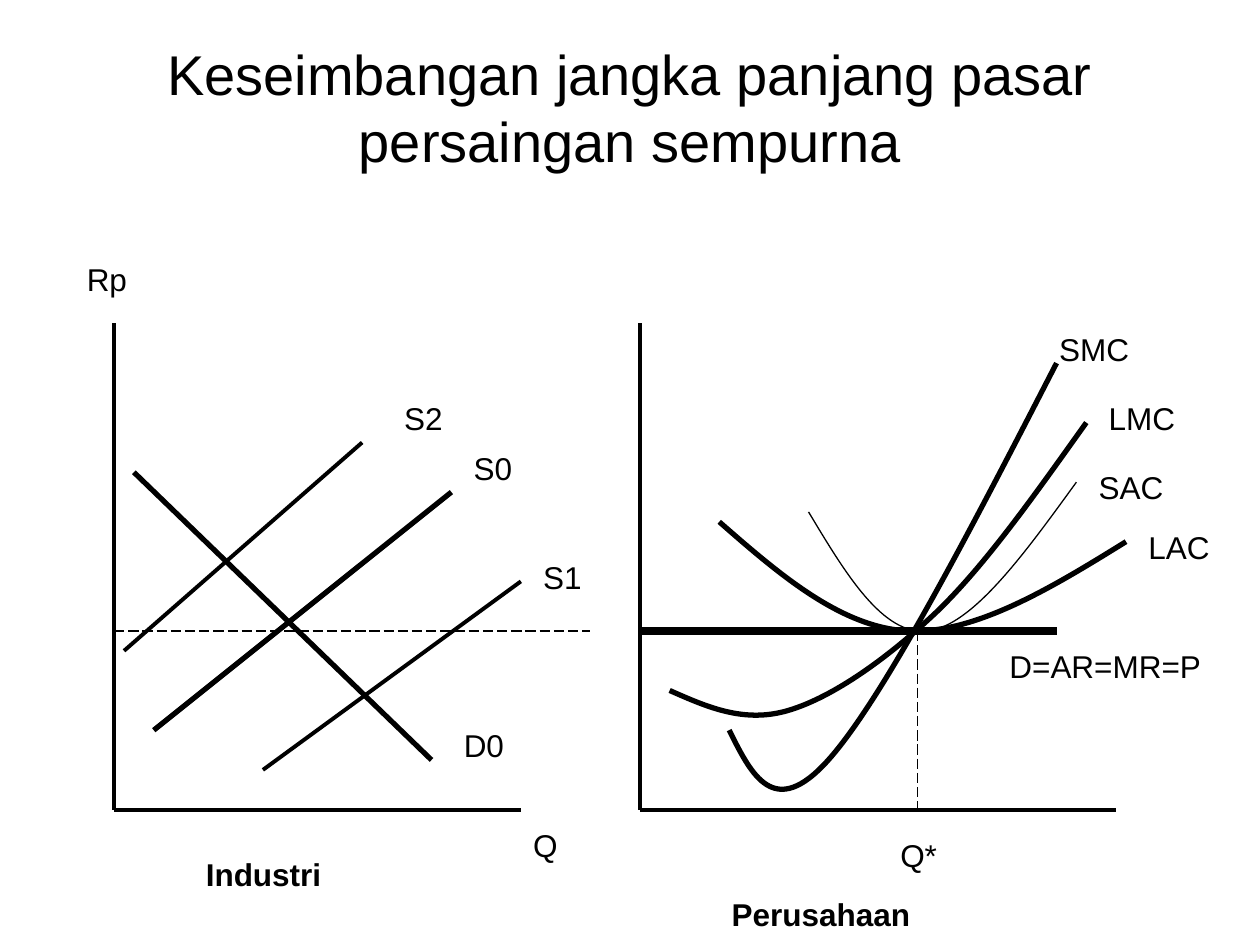
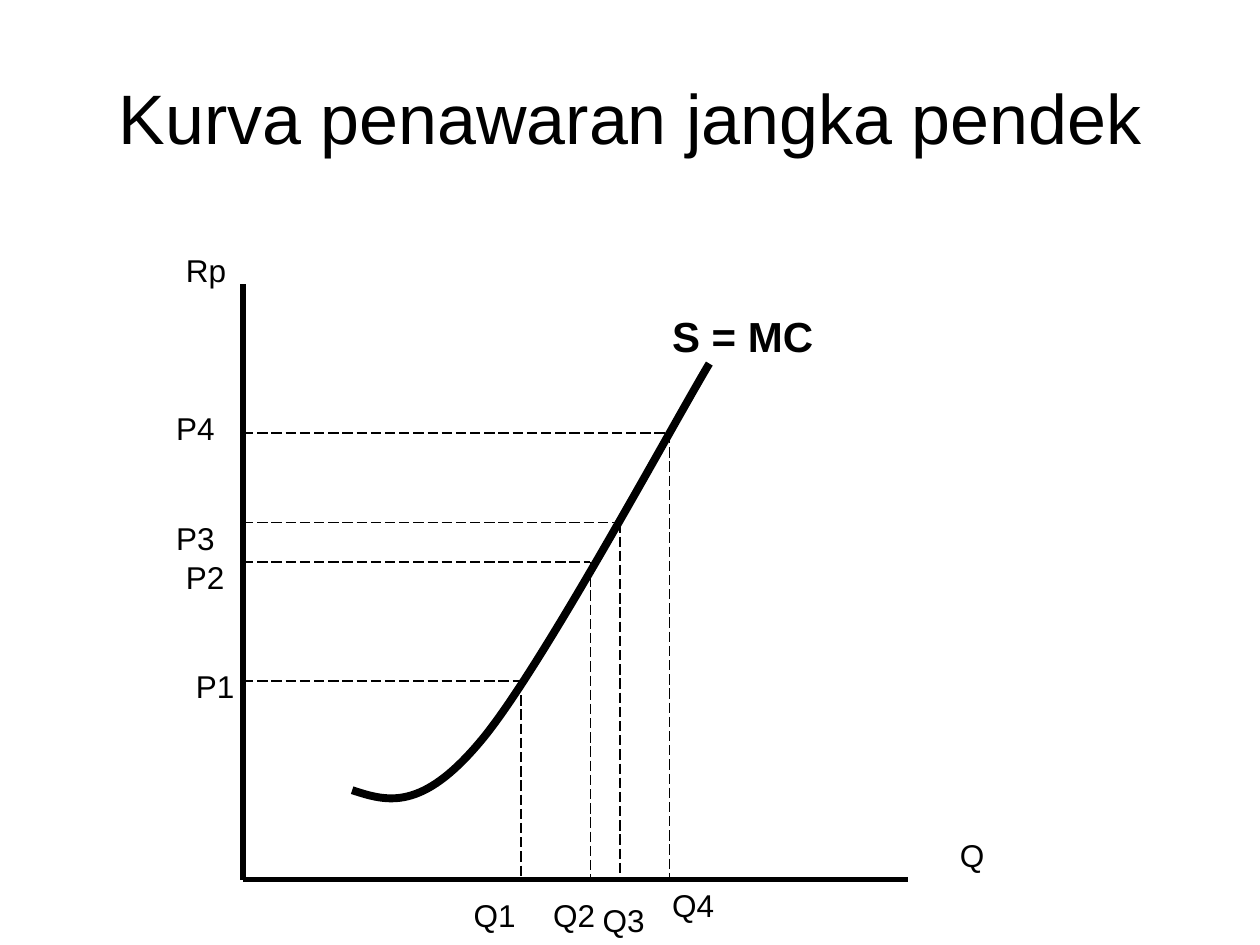
from dataclasses import dataclass
from functools import partial

from lxml.etree import SubElement
from pptx import Presentation
from pptx.dml.color import RGBColor
from pptx.enum.dml import MSO_LINE_DASH_STYLE as Dash
from pptx.enum.shapes import MSO_CONNECTOR as Connector
from pptx.enum.text import MSO_ANCHOR as Anchor, MSO_AUTO_SIZE as AutoSize, PP_ALIGN as Align
from pptx.oxml.ns import qn
from pptx.util import Cm, Pt

INK = "000000"
PAPER = "FFFFFF"
FONT = "Arial"
LABEL_HEIGHT = 1.02
GUIDE = {"weight": 0.75, "dash": Dash.LONG_DASH}
LABEL_FRAME = {"word_wrap": True, "auto_size": AutoSize.SHAPE_TO_FIT_TEXT}
TITLE_FRAME = {"word_wrap": True, "vertical_anchor": Anchor.MIDDLE}


@dataclass
class Box:
    """Area in centimetres that holds one diagram or title."""
    left: float
    top: float
    width: float
    height: float

    def at(self, x, y):
        """Turn a point inside the box into slide lengths."""
        return Cm(self.left + x), Cm(self.top + y)


def color(code):
    """Turn a hex string into a colour."""
    return RGBColor.from_string(code)


def apply(target, formats):
    """Set each format value on the target."""
    for key, value in formats.items():
        setattr(target, key, value)


def write(slide, corner, size, words, frame_format, points, bold=False, align=Align.LEFT):
    """Place one paragraph of text."""
    frame = slide.shapes.add_textbox(*corner, *map(Cm, size)).text_frame
    apply(frame, frame_format)
    paragraph = frame.paragraphs[0]
    paragraph.alignment = align
    run = paragraph.add_run()
    run.text = words
    apply(run.font, {"name": FONT, "size": Pt(points), "bold": bold})
    run.font.color.rgb = color(INK)


def add_title(slide, box, words, points):
    """Centre the slide title in its box."""
    write(slide, box.at(0, 0), (box.width, box.height), words, TITLE_FRAME, points,
          align=Align.CENTER)


def add_label(slide, box, words, x, y, width, points=18, bold=False):
    """Place a label relative to the diagram box."""
    height = LABEL_HEIGHT * points / 18
    write(slide, box.at(x, y), (width, height), words, LABEL_FRAME, points, bold)


def style_line(line, weight, dash=None):
    """Give a line its colour, weight and dash."""
    line.color.rgb = color(INK)
    apply(line, {"width": Pt(weight), "dash_style": dash})


def add_line(slide, box, start, end, weight, dash=None):
    """Draw a straight line between two points of the box."""
    line = slide.shapes.add_connector(Connector.STRAIGHT, *box.at(*start), *box.at(*end))
    style_line(line.line, weight, dash)
    SubElement(line._element.spPr, qn("a:effectLst"))


def add_curve(slide, box, controls, weight):
    """Draw a smooth open curve through joined cubic segments."""
    builder = slide.shapes.build_freeform(*box.at(*controls[0]))
    builder.add_line_segments([box.at(*point) for point in controls[1:]], close=False)
    curve = builder.convert_to_shape()
    straights = list(curve._element.iter(qn("a:lnTo")))
    for first in range(0, len(straights), 3):
        outline = straights[first].getparent()
        cubic = SubElement(outline, qn("a:cubicBezTo"))
        for straight in straights[first:first + 3]:
            cubic.append(straight[0])
            outline.remove(straight)
    curve.shadow.inherit = False
    curve.fill.background()
    style_line(curve.line, weight)


def add_axes(slide, box, weight):
    """Draw the vertical and horizontal axis of a diagram."""
    for end in ((0, 0), (box.width, box.height)):
        add_line(slide, box, (0, box.height), end, weight)


def add_industry(slide, box):
    """Draw demand and the three supply lines of the industry."""
    line, label = partial(add_line, slide, box), partial(add_label, slide, box)
    add_axes(slide, box, 2.25)
    for name, start, end, weight, label_at, width in (
        ("D0", (0.4, 3), (6.4, 8.8), 3, (6.8, 8), 1.8),
        ("S0", (0.8, 8.2), (6.8, 3.4), 3, (7, 2.4), 2.4),
        ("S1", (3, 9), (8.2, 5.2), 2.25, (8.4, 4.6), 2),
        ("S2", (0.2, 6.6), (5, 2.4), 2.25, (5.6, 1.4), 1.4),
    ):
        line(start, end, weight)
        label(name, *label_at, width)
    line((0, 6.2), (9.6, 6.2), **GUIDE)
    label("Rp", -0.8, -1.4, 2.6)
    label("Q", 8.2, 10, 1.4)
    label("Industri", 1.6, 10.6, 7.8, bold=True)


def add_firm(slide, box):
    """Draw the cost curves and the price line of the firm."""
    line, label = partial(add_line, slide, box), partial(add_label, slide, box)
    price, quantity = 6.2, 5.6
    add_axes(slide, box, 2.25)
    line((0, price), (8.4, price), 4.5)
    for name, weight, label_at, width, controls in (
        ("SAC", 0.75, (9, 2.8), 2.4,
         ((3.4, 3.8), (4.15, 5.05), (4.9, 6.3), (5.8, 6.2),
          (6.7, 6.1), (7.75, 4.65), (8.8, 3.2))),
        ("SMC", 3, (8.2, 0), 2.6,
         ((1.8, 8.2), (2.25, 9.1), (2.7, 10.03), (3.8, 8.8),
          (4.9, 7.57), (6.65, 4.2), (8.4, 0.8))),
        ("LMC", 3, (9.2, 1.4), 2.8,
         ((0.6, 7.4), (1.35, 7.73), (2.1, 8.07), (3, 7.8), (3.9, 7.53),
          (5, 6.75), (6, 5.8), (7, 4.83), (8, 3.4), (9, 2))),
        ("LAC", 3, (10, 4), 2.5,
         ((1.6, 4), (2.8, 5.05), (4.05, 6.13), (5.4, 6.2),
          (6.75, 6.27), (8.3, 5.33), (9.8, 4.4))),
    ):
        add_curve(slide, box, controls, weight)
        label(name, *label_at, width)
    line((quantity, price), (quantity, box.height), **GUIDE)
    label("Q*", 5, 10.2, 1.8)
    label("D=AR=MR=P", 7.2, 6.4, 5.3)
    label("Perusahaan", 1.6, 11.4, 4.8, bold=True)


def add_short_run_supply(slide, box):
    """Draw the supply curve with its price and quantity guides."""
    line, label = partial(add_line, slide, box), partial(add_label, slide, box)
    add_axes(slide, box, 3)
    add_curve(slide, box, ((2.2, 10.2), (2.9, 10.43), (3.6, 10.64), (4.8, 9.2),
                           (6, 7.77), (8.64, 2.87), (9.4, 1.6)), 4.5)
    label("S = MC", 8.4, 0.4, 7.2, points=24, bold=True)
    label("Rp", -1.4, -0.8, 2.4)
    label("Q", 14.2, 11, 1.6)
    for number, (quantity, price, price_at, price_width, quantity_at, quantity_width) in enumerate((
        (5.6, 8, (-1.2, 7.6), 1.6, (4.4, 12.2), 1.6),
        (7, 5.6, (-1.4, 5.4), 1.4, (6, 12.2), 1.6),
        (7.6, 4.8, (-1.6, 4.6), 3.2, (7, 12.3), 3),
        (8.6, 3, (-1.6, 2.4), 3.2, (8.4, 12), 2.2),
    ), start=1):
        line((0, price), (quantity, price), **GUIDE)
        line((quantity, price), (quantity, box.height), **GUIDE)
        label(f"P{number}", *price_at, price_width)
        label(f"Q{number}", *quantity_at, quantity_width)


def new_slide(deck):
    """Add a blank slide with the shared background."""
    slide = deck.slides.add_slide(deck.slide_layouts[6])
    slide.background.fill.solid()
    slide.background.fill.fore_color.rgb = color(PAPER)
    return slide


def main():
    """Build both slides and save the deck."""
    deck = Presentation()
    apply(deck, {"slide_width": Cm(25.4), "slide_height": Cm(19.05)})

    equilibrium = new_slide(deck)
    add_title(equilibrium, Box(1.27, 0.76, 22.86, 2.77),
              "Keseimbangan jangka panjang pasar persaingan sempurna", 32)
    add_industry(equilibrium, Box(2.3, 6.52, 8.2, 9.8))
    add_firm(equilibrium, Box(12.9, 6.52, 9.6, 9.8))

    supply = new_slide(deck)
    add_title(supply, Box(1.27, 0.76, 22.86, 3.18), "Kurva penawaran jangka pendek", 40)
    add_short_run_supply(supply, Box(4.9, 5.73, 13.4, 12))

    deck.save("out.pptx")


if __name__ == "__main__":
    main()
